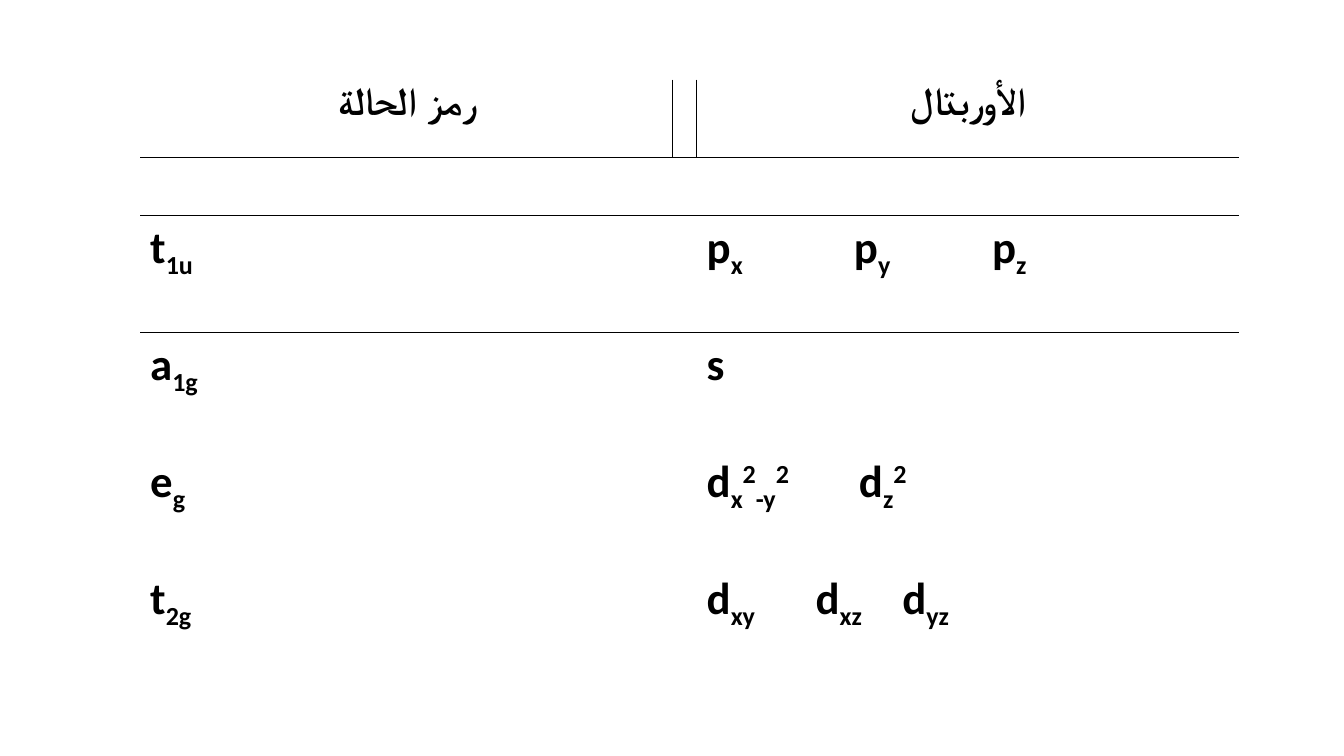
"""Build a slide with a table of state symbols and their orbitals."""
from lxml.etree import SubElement
from pptx import Presentation
from pptx.dml.color import RGBColor
from pptx.enum.text import PP_ALIGN
from pptx.oxml.ns import qn
from pptx.util import Inches, Pt

BLACK = RGBColor(0, 0, 0)
FONT = "Calibri"
NO_STYLE = "{2D5ABB26-0587-4C30-8999-92F81FD0307C}"
BASELINES = {"_": "-25000", "^": "30000"}
COLUMN_WIDTHS = [5.28, 0.23, 5.38]
ROW_HEIGHTS = [0.77, 0.58] + [1.16] * 4
HEADERS = {0: "رمز الحالة", 2: "الأوربتال"}
STATES = [
    ("t _1u", "p _x \t p _y \t p _z", [1.46, 2.83]),
    ("a _1g", "s", []),
    ("e _g", "d _x ^2 _-y ^2 \t d _z ^2", [1.51]),
    ("t _2g", "d _xy \t d _xz \t d _yz", [1.08, 1.94]),
]
BORDERS = {
    (0, 0): "RB", (0, 1): "LRB", (0, 2): "LB",
    (1, 0): "TB", (1, 1): "TB", (1, 2): "TB",
    (2, 0): "T", (2, 1): "T", (2, 2): "T",
}


def format_run(run, size):
    run.font.name = FONT
    run.font.size = Pt(size)
    run.font.bold = True
    run.font.color.rgb = BLACK


def write_symbols(cell, symbols, tab_stops=()):
    paragraph = cell.text_frame.paragraphs[0]
    if tab_stops:
        tab_list = SubElement(paragraph._p.get_or_add_pPr(), qn("a:tabLst"))
        for stop in tab_stops:
            SubElement(tab_list, qn("a:tab"), pos=str(Inches(stop)), algn="l")
    for symbol in symbols.split(" "):
        run = paragraph.add_run()
        run.text = symbol.lstrip("_^")
        format_run(run, 32)
        if symbol[0] in BASELINES:
            run.font._element.set("baseline", BASELINES[symbol[0]])


presentation = Presentation()
presentation.slide_width = Inches(13.33)
presentation.slide_height = Inches(7.5)
slide = presentation.slides.add_slide(presentation.slide_layouts[6])

frame = slide.shapes.add_table(
    len(ROW_HEIGHTS), len(COLUMN_WIDTHS), Inches(1.39), Inches(0.79),
    Inches(sum(COLUMN_WIDTHS)), Inches(sum(ROW_HEIGHTS)))
table = frame.table
table.horz_banding = False
table._tbl.tblPr.find(qn("a:tableStyleId")).text = NO_STYLE
for column, width in zip(table.columns, COLUMN_WIDTHS):
    column.width = Inches(width)
for row, height in zip(table.rows, ROW_HEIGHTS):
    row.height = Inches(height)

for row_index in range(len(ROW_HEIGHTS)):
    for column_index in range(len(COLUMN_WIDTHS)):
        cell = table.cell(row_index, column_index)
        properties = cell._tc.get_or_add_tcPr()
        for side in BORDERS.get((row_index, column_index), ""):
            line = SubElement(properties, qn(f"a:ln{side}"), w=str(Pt(1)))
            fill = SubElement(line, qn("a:solidFill"))
            SubElement(fill, qn("a:srgbClr"), val=str(BLACK))
        cell.fill.background()
    if row_index > 0:
        table.cell(row_index, 0).merge(table.cell(row_index, 1))

for column_index, header in HEADERS.items():
    paragraph = table.cell(0, column_index).text_frame.paragraphs[0]
    paragraph.text = header
    paragraph.alignment = PP_ALIGN.CENTER
    paragraph._p.get_or_add_pPr().set("rtl", "1")
    format_run(paragraph.runs[0], 28)

for row_index, (state, orbitals, tab_stops) in enumerate(STATES, start=2):
    write_symbols(table.cell(row_index, 0), state)
    write_symbols(table.cell(row_index, 2), orbitals, tab_stops)

presentation.save("out.pptx")
